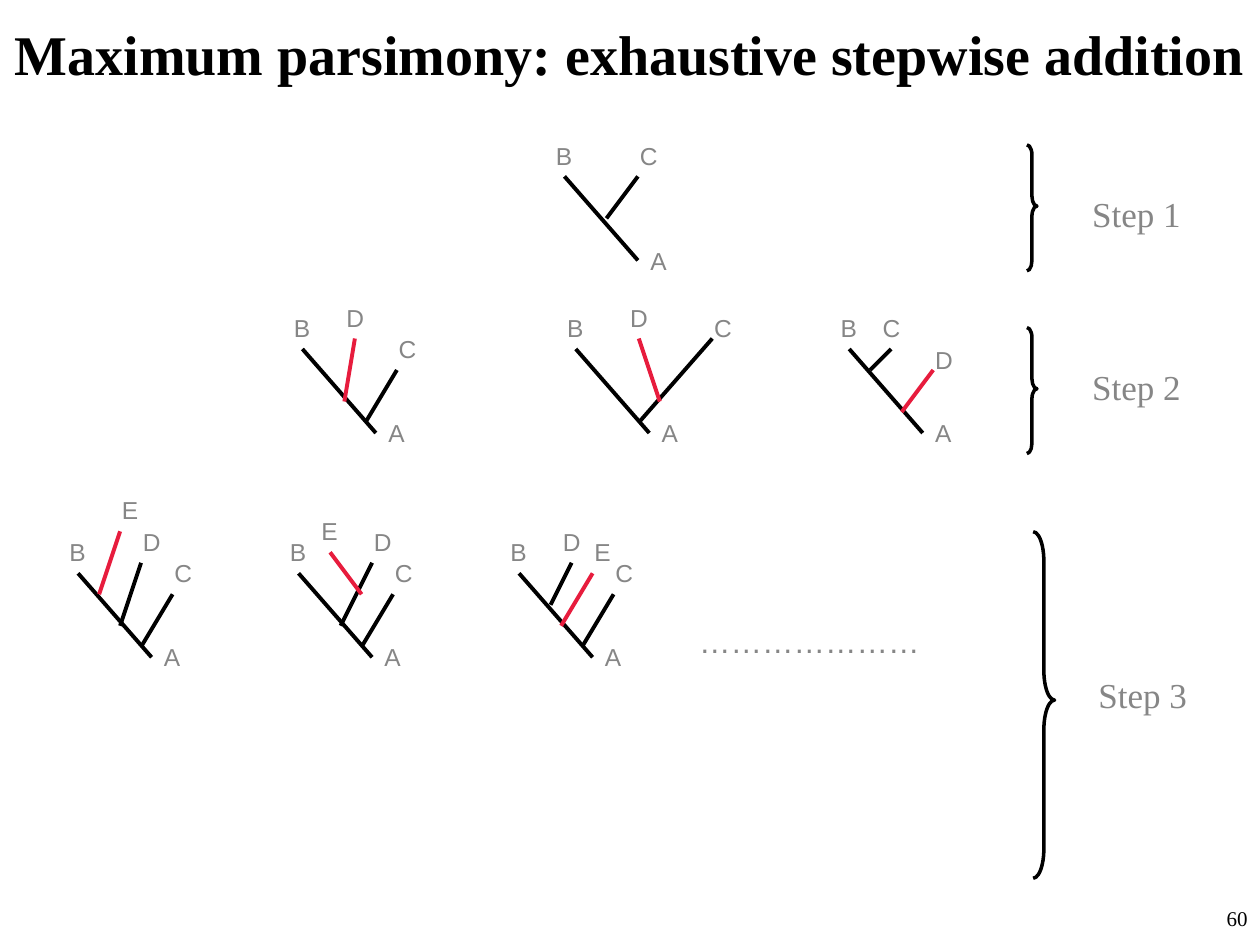
from collections import namedtuple

from pptx import Presentation
from pptx.dml.color import RGBColor
from pptx.enum.shapes import MSO_CONNECTOR, MSO_SHAPE
from pptx.enum.text import MSO_ANCHOR, PP_ALIGN
from pptx.oxml.ns import qn
from pptx.util import Inches, Pt
from lxml.etree import SubElement

BLACK, GRAY, RED = "000000", "868686", "E71C3D"
SERIF, SANS = "Times New Roman", "Arial"
GRID = 1 / 12  # inches per tree unit
TRUNK_END = (7, 8)

# Tip, join and label corner are in grid units from the tip of branch B.
Branch = namedtuple("Branch", "taxon tip join label")
C_LOW = Branch("C", (9, 2), (6, 7), (8, -2))

# Each tree: position of tip B in inches, then its branches, newest last.
FIRST_TREE = (4.48, 1.4, [Branch("C", (7, 0), (4, 4), (6, -4))])
GROWN_TREES = [
    (2.4, 2.77, [C_LOW, Branch("D", (5, -1), (4, 5), (3, -5))]),
    (4.57, 2.77, [Branch("C", (13, -1), (6, 7), (12, -4)),
                  Branch("D", (6, -1), (8, 5), (4, -5))]),
    (6.74, 2.77, [Branch("C", (4, 0), (2, 2), (2, -4)),
                  Branch("D", (8, 2), (5, 6), (7, -1))]),
]
STEP_3_BRANCHES = [
    [C_LOW, Branch("D", (6, -1), (4, 5), (5, -5)),
     Branch("E", (4, -4), (2, 2), (3, -8))],
    [C_LOW, Branch("D", (7, -1), (4, 5), (6, -5)),
     Branch("E", (3, -2), (6, 2), (1, -6))],
    [C_LOW, Branch("D", (5, -1), (3, 3), (3, -5)),
     Branch("E", (7, 0), (4, 5), (6, -4))],
]
GROWN_TREES += [(0.62 + 1.75 * column, 4.55, branches)
                for column, branches in enumerate(STEP_3_BRANCHES)]

# Brace left, top, width, height, then top of the step name.
STEPS = [
    (8.15, 1.15, 0.08, 1, 1.48),
    (8.15, 2.6, 0.08, 1, 2.85),
    (8.2, 4.22, 0.17, 2.75, 5.3),
]


def rgb(color):
    return RGBColor.from_string(color)


def write(frame, text, size, font, color, bold=False, align=PP_ALIGN.LEFT):
    frame.word_wrap = True
    frame.text = text
    paragraph = frame.paragraphs[0]
    paragraph.alignment = align
    style = paragraph.runs[0].font
    style.size, style.name, style.bold = Pt(size), font, bold
    style.color.rgb = rgb(color)


def add_text(slide, box, text, size, font, color, **options):
    label = slide.shapes.add_textbox(*map(Inches, box))
    write(label.text_frame, text, size, font, color, **options)


def add_title(slide, text):
    title = slide.shapes.title
    title.left, title.top = Inches(0), Inches(0)
    title.width, title.height = Inches(10), Inches(0.84)
    title.text_frame.vertical_anchor = MSO_ANCHOR.MIDDLE
    write(title.text_frame, text, 32, SERIF, BLACK, bold=True,
          align=PP_ALIGN.CENTER)


def add_line(slide, start, end, color):
    line = slide.shapes.add_connector(
        MSO_CONNECTOR.STRAIGHT, *map(Inches, (*start, *end)))
    line.line.color.rgb = rgb(color)
    line.line.width = Pt(2.25)
    SubElement(line._element.spPr, qn("a:effectLst"))


def add_tree(slide, left, top, branches, newest_color):
    def place(point):
        return left + point[0] * GRID, top + point[1] * GRID

    def add_taxon(taxon, corner):
        add_text(slide, (*place(corner), 0.33, 0.33), taxon, 14, SANS, GRAY)

    add_line(slide, place((0, 0)), place(TRUNK_END), BLACK)
    add_taxon("B", (-2, -4))
    add_taxon("A", (7, 6))
    for branch in branches:
        color = newest_color if branch is branches[-1] else BLACK
        add_line(slide, place(branch.tip), place(branch.join), color)
        add_taxon(branch.taxon, branch.label)


def add_step(slide, number, left, top, width, height, name_top):
    brace = slide.shapes.add_shape(
        MSO_SHAPE.RIGHT_BRACE, *map(Inches, (left, top, width, height)))
    brace.shadow.inherit = False
    brace.adjustments[0] = 1.375 if height > 1 else 1
    brace.adjustments[1] = 0.486
    brace.fill.background()
    brace.line.color.rgb = rgb(BLACK)
    brace.line.width = Pt(2)
    add_text(slide, (left + 0.42, name_top, 1.17, 0.44), f"Step {number}",
             20, SERIF, GRAY)


def main():
    deck = Presentation()
    deck.slide_width, deck.slide_height = Inches(10), Inches(7.5)
    slide = deck.slides.add_slide(deck.slide_layouts[5])
    add_title(slide, "Maximum parsimony: exhaustive stepwise addition")
    add_text(slide, (7.92, 7.14, 2.08, 0.36), "60", 12, SERIF, BLACK,
             align=PP_ALIGN.RIGHT)
    add_tree(slide, *FIRST_TREE, BLACK)
    for tree in GROWN_TREES:
        add_tree(slide, *tree, RED)
    add_text(slide, (5.45, 4.89, 3.75, 0.5), "…………………", 18, SANS, GRAY)
    for number, step in enumerate(STEPS, start=1):
        add_step(slide, number, *step)
    deck.save("out.pptx")


if __name__ == "__main__":
    main()
